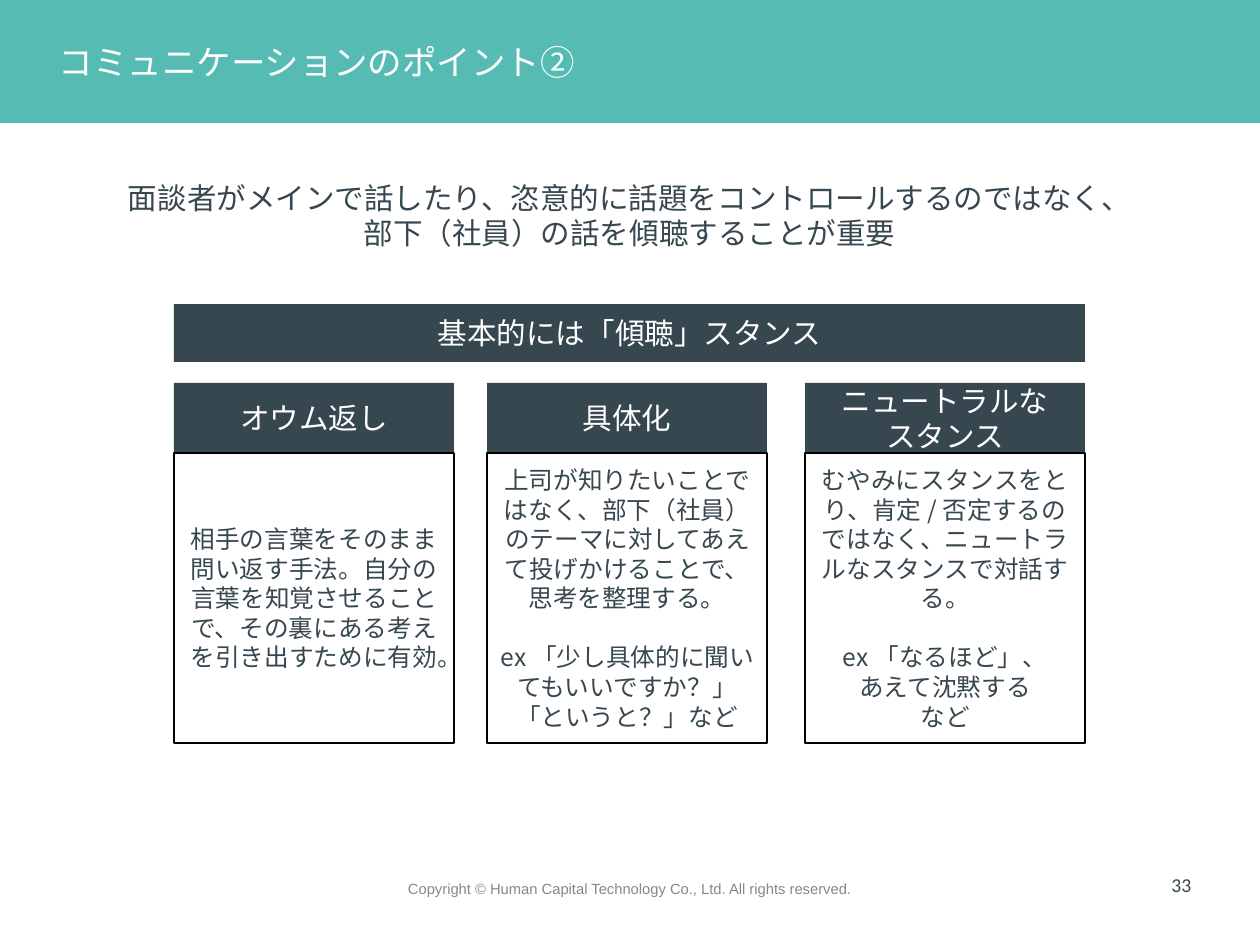
import pptx
import pptx.util
import pptx.dml.color
import pptx.enum.shapes
import pptx.enum.text
import pptx.oxml.ns
import lxml.etree

EMU_PER_PX = 10320
GOTHIC = "Noto Sans CJK JP"
TEAL, SLATE, WHITE, BLACK, GRAY = "55BBB3", "37474F", "FFFFFF", "000000", "888888"
ALIGN = pptx.enum.text.PP_ALIGN
ANCHOR = pptx.enum.text.MSO_ANCHOR

CARD_W, HEAD_TOP, HEAD_H, BODY_TOP, BODY_H = 280, 383, 70, 453, 290
CARDS = [
    (174, ["オウム返し"],
     ["相手の言葉をそのまま問い返す手法。自分の言葉を知覚させることで、その裏にある考えを引き出すために有効。"]),
    (487, ["具体化"],
     ["上司が知りたいことではなく、部下（社員）のテーマに対してあえて投げかけることで、思考を整理する。",
      "ex「少し具体的に聞いてもいいですか？」", "「というと？」など"]),
    (805, ["ニュートラルな", "スタンス"],
     ["むやみにスタンスをとり、肯定/否定するのではなく、ニュートラルなスタンスで対話する。",
      "ex「なるほど」、", "あえて沈黙する", "など"]),
]


def px(n):
    return pptx.util.Emu(n * EMU_PER_PX)


def rgb(color):
    return pptx.dml.color.RGBColor.from_string(color)


def write(sp, lines, size, color, font=GOTHIC, align=ALIGN.CENTER, anchor=ANCHOR.MIDDLE):
    tf = sp.text_frame
    tf.word_wrap = True
    tf.auto_size = pptx.enum.text.MSO_AUTO_SIZE.NONE
    tf.vertical_anchor = anchor
    for i, line in enumerate(lines):
        p = tf.add_paragraph() if i else tf.paragraphs[0]
        p.alignment = align
        p.line_spacing = pptx.util.Pt(round(size * 1.21))
        p.space_before = pptx.util.Pt(24 if line.startswith("ex") else 0)
        r = p.add_run()
        r.text = line
        r.font.size = pptx.util.Pt(size)
        r.font.color.rgb = rgb(color)
        r.font.name = font
        ea = lxml.etree.SubElement(r.font._element, pptx.oxml.ns.qn("a:ea"))
        ea.set("typeface", font)


def add_box(s, x, y, w, h, lines, size, color, fill=None, line=None):
    sp = s.shapes.add_shape(pptx.enum.shapes.MSO_SHAPE.RECTANGLE, px(x), px(y), px(w), px(h))
    sp.shadow.inherit = False
    if fill:
        sp.fill.solid()
        sp.fill.fore_color.rgb = rgb(fill)
    else:
        sp.fill.background()
    if line:
        sp.line.color.rgb = rgb(line)
        sp.line.width = pptx.util.Pt(2)
    else:
        sp.line.fill.background()
    write(sp, lines, size, color)


def add_text(s, x, y, w, h, lines, size, color, **style):
    sp = s.shapes.add_textbox(px(x), px(y), px(w), px(h))
    write(sp, lines, size, color, **style)


def set_title(s, text):
    sp = s.shapes.title
    sp.left, sp.top, sp.width, sp.height = px(0), px(0), px(1260), px(123)
    sp.fill.solid()
    sp.fill.fore_color.rgb = rgb(TEAL)
    sp.text_frame.margin_left = px(59)
    write(sp, [text], 28, WHITE, align=ALIGN.LEFT)


def add_card(s, x, head, body):
    add_box(s, x, HEAD_TOP, CARD_W, HEAD_H, head, 24, WHITE, fill=SLATE)
    add_box(s, x, BODY_TOP, CARD_W, BODY_H, body, 20, SLATE, line=BLACK)


def main():
    prs = pptx.Presentation()
    prs.slide_width, prs.slide_height = px(1260), px(945)
    s = prs.slides.add_slide(prs.slide_layouts[5])
    set_title(s, "コミュニケーションのポイント②")
    add_text(s, 104, 175, 1051, 81,
             ["面談者がメインで話したり、恣意的に話題をコントロールするのではなく、",
              "部下（社員）の話を傾聴することが重要"], 24, SLATE, anchor=ANCHOR.TOP)
    add_box(s, 174, 304, 911, 58, ["基本的には「傾聴」スタンス"], 24, WHITE, fill=SLATE)
    for x, head, body in CARDS:
        add_card(s, x, head, body)
    add_text(s, 345, 875, 570, 26,
             ["Copyright © Human Capital Technology Co., Ltd. All rights reserved."],
             12, GRAY, font="Arial")
    add_text(s, 1125, 869, 75, 32, ["33"], 16, SLATE, font="Calibri", align=ALIGN.RIGHT)
    prs.save("out.pptx")


if __name__ == "__main__":
    main()
